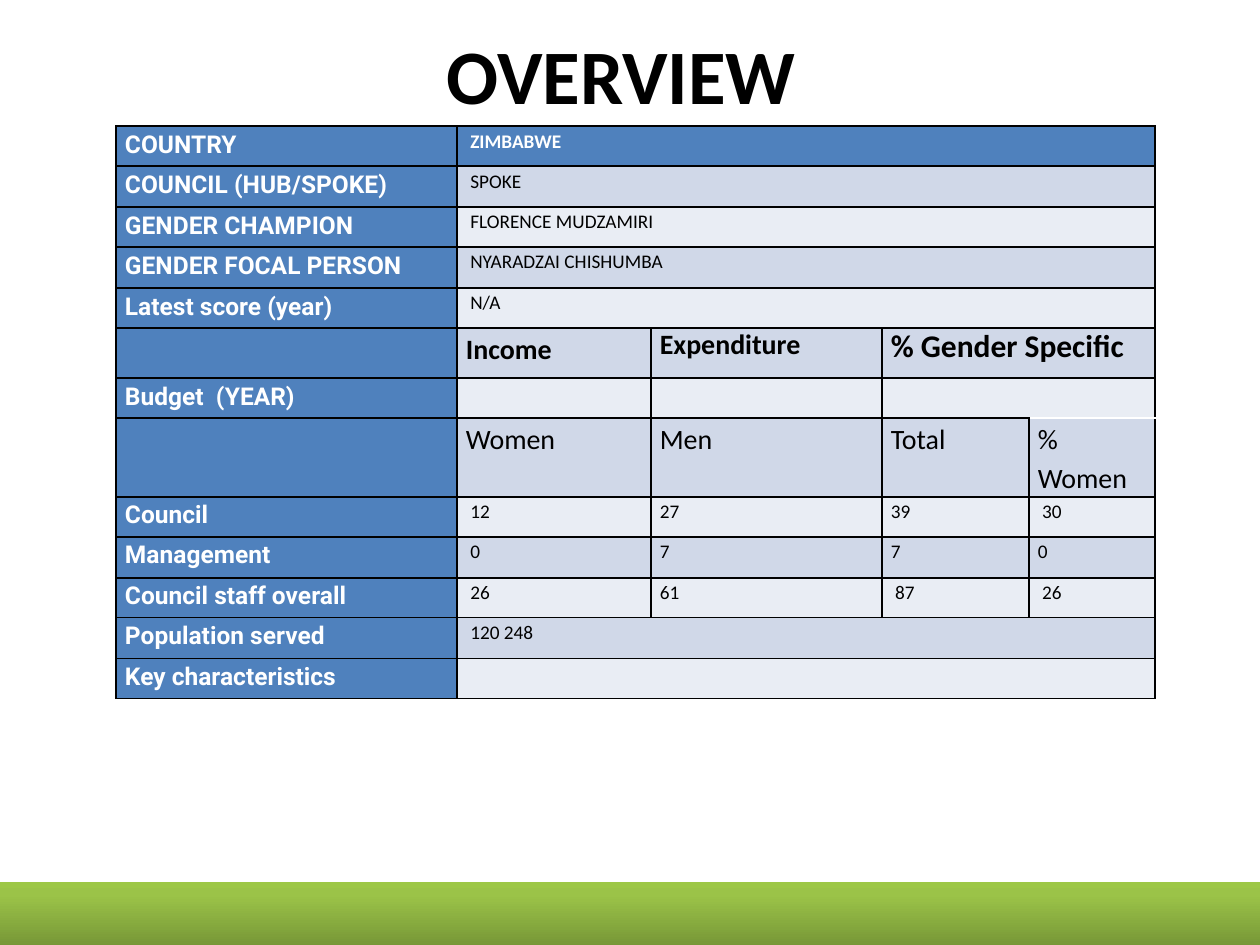
from copy import deepcopy

from lxml import etree
from pptx import Presentation
from pptx.dml.color import RGBColor
from pptx.enum.shapes import MSO_SHAPE
from pptx.enum.text import MSO_ANCHOR, PP_ALIGN
from pptx.oxml.ns import qn
from pptx.util import Pt

PX = 7257  # EMU per px, 126 px to the inch
RECTANGLE = MSO_SHAPE.RECTANGLE
MIDDLE = MSO_ANCHOR.MIDDLE
CENTER = PP_ALIGN.CENTER

BLACK = RGBColor(0x00, 0x00, 0x00)
WHITE = RGBColor(0xFF, 0xFF, 0xFF)
BLUE = RGBColor(0x4F, 0x81, 0xBD)
BAND_DARK = RGBColor(0xD0, 0xD8, 0xE8)
BAND_LIGHT = RGBColor(0xE9, 0xED, 0xF4)
GREENS = [(0, RGBColor(0x77, 0x97, 0x37)),
          (0.8, RGBColor(0x9B, 0xC3, 0x48)),
          (1, RGBColor(0x9D, 0xC7, 0x46))]

COLUMN_WIDTHS = [341, 194, 231, 147, 126]
BUDGET_HEADING, GENDER_HEADING = 5, 7
TALL_ROWS = {BUDGET_HEADING: 50, GENDER_HEADING: 79}

# A short row spans its last cell over the columns that remain
OVERVIEW = [
    ["COUNTRY", " ZIMBABWE"],
    ["COUNCIL (HUB/SPOKE)", " SPOKE"],
    ["GENDER CHAMPION", " FLORENCE MUDZAMIRI"],
    ["GENDER FOCAL PERSON", " NYARADZAI CHISHUMBA"],
    ["Latest score (year)", " N/A"],
    ["", "Income", "Expenditure", "% Gender Specific"],
    ["Budget  (YEAR)", "", "", ""],
    ["", "Women", "Men", "Total", "% Women"],
    ["Council", " 12", "27", "39", " 30"],
    ["Management", " 0", "7", "7", "0"],
    ["Council staff overall", " 26", "61", " 87", " 26"],
    ["Population served", " 120 248"],
    ["Key characteristics", ""],
]


def add_run(paragraph, text, size, font, color, bold):
    run = paragraph.add_run()
    run.text = text
    run.font.size = Pt(size)
    run.font.name = font
    run.font.color.rgb = color
    run.font.bold = bold


def set_borders(cell, colors):
    properties = cell._tc.get_or_add_tcPr()
    for position, (side, color) in enumerate(colors.items()):
        line = etree.Element(qn(f"a:{side}"), w="12700")
        solid = etree.SubElement(line, qn("a:solidFill"))
        etree.SubElement(solid, qn("a:srgbClr"), val=str(color))
        properties.insert(position, line)


prs = Presentation()
prs.slide_width = 1260 * PX
prs.slide_height = 945 * PX
slide = prs.slides.add_slide(prs.slide_layouts[6])

# Title
title = slide.shapes.add_textbox(63 * PX, 21 * PX, 1134 * PX, 105 * PX).text_frame
title.word_wrap = True
title.vertical_anchor = MIDDLE
title.paragraphs[0].alignment = CENTER
add_run(title.paragraphs[0], "OVERVIEW ", 44, "Calibri", BLACK, True)

# Overview table
table = slide.shapes.add_table(len(OVERVIEW), len(COLUMN_WIDTHS), 116 * PX, 126 * PX,
                               sum(COLUMN_WIDTHS) * PX, 573 * PX).table
for column, width in zip(table.columns, COLUMN_WIDTHS):
    column.width = width * PX
last = len(COLUMN_WIDTHS) - 1

for r, texts in enumerate(OVERVIEW):
    table.rows[r].height = TALL_ROWS.get(r, 40 + r % 2) * PX
    band = BAND_DARK if r % 2 else BAND_LIGHT
    for c in range(last + 1):
        cell = table.cell(r, c)
        cell.margin_left = cell.margin_right = 9 * PX
        cell.margin_top = cell.margin_bottom = 0
        cell.fill.solid()
        cell.fill.fore_color.rgb = BLUE if r == 0 or c == 0 else band
        borders = dict.fromkeys(["lnL", "lnR", "lnT", "lnB"], BLACK)
        # The line above "% Women" is white
        if c == last and r == GENDER_HEADING:
            borders["lnT"] = WHITE
        elif c == last and r == GENDER_HEADING - 1:
            borders["lnB"] = WHITE
        set_borders(cell, borders)

        if c >= len(texts) or not texts[c]:
            continue
        paragraph = cell.text_frame.paragraphs[0]
        if r != BUDGET_HEADING or c == 1:
            paragraph.line_spacing = 1.15
        if c == 0:
            style = (14, "Roboto", WHITE, True)
        elif r == BUDGET_HEADING:
            style = (18 if c == 3 else 16, "Calibri", BLACK, True)
        elif r == GENDER_HEADING:
            style = (16, "Calibri", BLACK, False)
        else:
            style = (11, "Calibri", WHITE if r == 0 else BLACK, r == 0)
        add_run(paragraph, texts[c], *style)
    if len(texts) <= last:
        table.cell(r, len(texts) - 1).merge(table.cell(r, last))

# Green footer bar
footer = slide.shapes.add_shape(RECTANGLE, 0, 882 * PX, 1286 * PX, 64 * PX)
footer.shadow.inherit = False
footer.line.fill.background()
footer.fill.gradient()
footer.fill.gradient_angle = 90
stop_list = footer._element.spPr.find(qn("a:gradFill")).find(qn("a:gsLst"))
stop_list.append(deepcopy(stop_list[0]))
for stop, (position, color) in zip(footer.fill.gradient_stops, GREENS):
    stop.position = position
    stop.color.rgb = color

prs.save("out.pptx")
